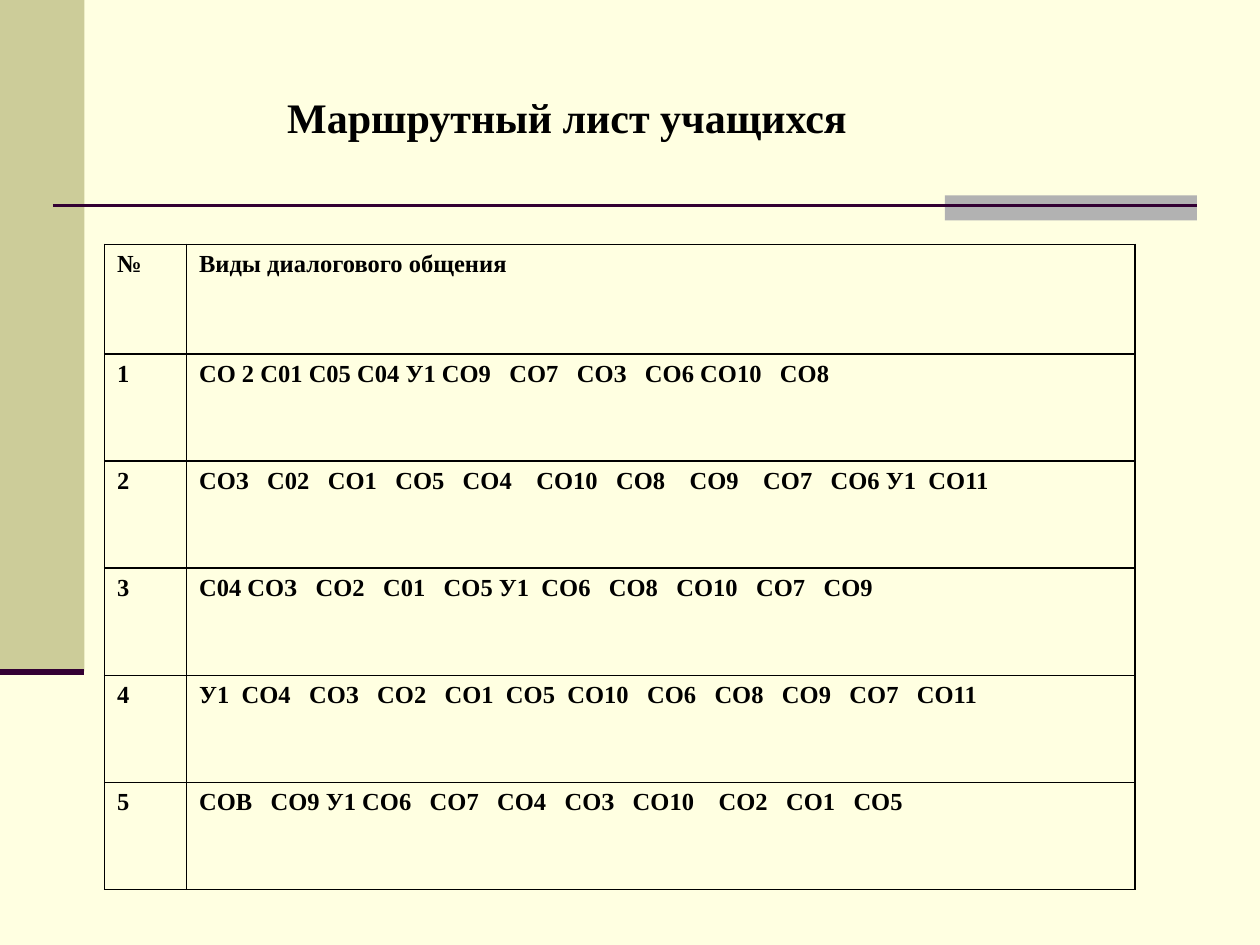
from dataclasses import dataclass

from lxml.etree import SubElement
from pptx import Presentation
from pptx.dml.color import RGBColor as RGB
from pptx.enum.shapes import MSO_CONNECTOR as CONN, MSO_SHAPE as SHAPE
from pptx.enum.text import MSO_ANCHOR as ANCHOR, PP_ALIGN as ALIGN
from pptx.oxml.ns import qn
from pptx.util import Inches, Pt


@dataclass(frozen=True)
class Theme:
    font: str = "Times New Roman"
    paper: str = "FFFFE1"
    ink: str = "000000"
    sidebar: str = "CCCC99"
    accent: str = "B2B2B2"
    rule: str = "330033"
    title_size: float = 24
    cell_size: float = 14
    border: float = 1
    indent: float = 0.38


TITLE = "Маршрутный лист учащихся"
ROUTES = [
    ("№", "Виды диалогового общения"),
    ("1", "СО 2 С01 С05 С04 У1 СО9   СО7   СОЗ   СО6 СО10   СО8"),
    ("2", "СОЗ   С02   СО1   СО5   СО4    СО10   СО8    СО9    СО7   СО6 У1  СО11"),
    ("3", "С04 СОЗ   СО2   С01   СО5 У1  СО6   СО8   СО10   СО7   СО9"),
    ("4", "У1  СО4   СОЗ   СО2   СО1  СО5  СО10   СО6   СО8   СО9   СО7   СО11"),
    ("5", "СОВ   СО9 У1 СО6   СО7   СО4   СОЗ   СО10    СО2   СО1   СО5"),
]


class SlideBuilder:
    """Draws on one slide; lengths are in columns and rows one inch wide."""

    def __init__(self, prs, theme):
        self.theme = theme
        self.slide = prs.slides.add_slide(prs.slide_layouts[5])
        fill = self.slide.background.fill
        fill.solid()
        fill.fore_color.rgb = RGB.from_string(theme.paper)

    def style(self, p, size):
        p.font.name = self.theme.font
        p.font.size = Pt(size)
        p.font.bold = True
        p.font.color.rgb = RGB.from_string(self.theme.ink)

    def block(self, x, y, w, h, color):
        sp = self.slide.shapes.add_shape(SHAPE.RECTANGLE, *map(Inches, (x, y, w, h)))
        sp.shadow.inherit = False
        sp.fill.solid()
        sp.fill.fore_color.rgb = RGB.from_string(color)
        sp.line.fill.background()

    def rule(self, x1, x2, y, width):
        line = self.slide.shapes.add_connector(
            CONN.STRAIGHT, *map(Inches, (x1, y, x2, y)))
        line.line.color.rgb = RGB.from_string(self.theme.rule)
        line.line.width = Pt(width)
        SubElement(line._element.spPr, qn("a:effectLst"))

    def title(self, text, x, y, w, h):
        sp = self.slide.shapes.title
        sp.left, sp.top, sp.width, sp.height = map(Inches, (x, y, w, h))
        tf = sp.text_frame
        tf.text = text
        tf.vertical_anchor = ANCHOR.MIDDLE
        p = tf.paragraphs[0]
        p.alignment = ALIGN.CENTER
        self.style(p, self.theme.title_size)

    def table(self, rows, x, y, widths, heights):
        frame = self.slide.shapes.add_table(
            len(rows), len(widths),
            *map(Inches, (x, y, sum(widths), sum(heights))))
        table = frame.table
        table.first_row = table.horz_banding = False
        for column, width in zip(table.columns, widths):
            column.width = Inches(width)
        for row, height, texts in zip(table.rows, heights, rows):
            row.height = Inches(height)
            for cell, text in zip(row.cells, texts):
                self.cell(cell, text)

    def cell(self, cell, text):
        cell.text = text
        p = cell.text_frame.paragraphs[0]
        self.style(p, self.theme.cell_size)
        indent = Inches(self.theme.indent)
        pPr = p._p.get_or_add_pPr()
        pPr.set("marL", str(indent))
        pPr.set("indent", str(-indent))
        tcPr = cell._tc.get_or_add_tcPr()
        for side in "LRTB":
            ln = SubElement(tcPr, qn(f"a:ln{side}"), w=str(Pt(self.theme.border)))
            fill = SubElement(ln, qn("a:solidFill"))
            SubElement(fill, qn("a:srgbClr"), val=self.theme.ink)
        cell.fill.background()


def main():
    prs = Presentation()
    prs.slide_width, prs.slide_height = Inches(10), Inches(7.5)
    theme = Theme()
    page = SlideBuilder(prs, theme)
    page.block(0, 0, 0.67, 5.33, theme.sidebar)
    page.block(7.5, 1.55, 2, 0.2, theme.accent)
    page.rule(0.42, 9.5, 1.63, 1.5)
    page.rule(0, 0.67, 5.33, 3.5)
    page.table(ROUTES, 0.83, 1.94, widths=[0.65, 7.53],
               heights=[0.87] + [0.85] * (len(ROUTES) - 1))
    page.title(TITLE, 0, 0.3, 9, 1.25)
    prs.save("out.pptx")


if __name__ == "__main__":
    main()
